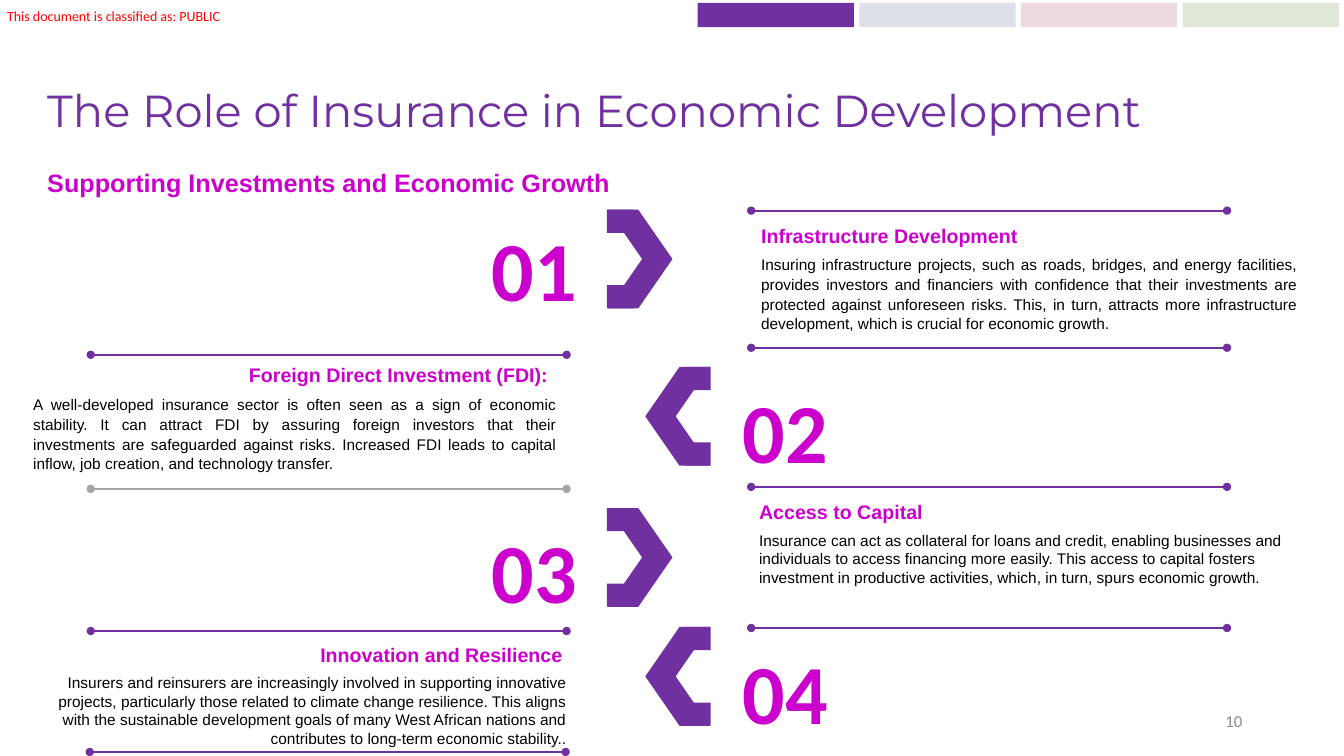
from lxml import etree
from pptx import Presentation
from pptx.dml.color import RGBColor
from pptx.enum.shapes import MSO_CONNECTOR, MSO_SHAPE
from pptx.enum.text import MSO_ANCHOR, PP_ALIGN
from pptx.oxml.ns import qn
from pptx.util import Inches, Pt

LEFT, CENTER, RIGHT, JUSTIFY = PP_ALIGN.LEFT, PP_ALIGN.CENTER, PP_ALIGN.RIGHT, PP_ALIGN.JUSTIFY
TOP, MIDDLE = MSO_ANCHOR.TOP, MSO_ANCHOR.MIDDLE
RECTANGLE, CHEVRON = MSO_SHAPE.RECTANGLE, MSO_SHAPE.CHEVRON
STRAIGHT = MSO_CONNECTOR.STRAIGHT

COLORS = {
    "purple": "7030A0", "magenta": "CC00CC", "black": "000000", "red": "FF0000",
    "gray": "A5A5A5", "page number": "8C8C8C",
    "navy": "203864", "crimson": "990033", "green": "336600",
}

CLASSIFICATION = "This document is classified as: PUBLIC"
TITLE = "The Role of Insurance in Economic Development"
SUBTITLE = "Supporting Investments and Economic Growth"
PAGE_NUMBER = "10"

# Each text box is (left, top, width, height).
TOPICS = [
    {"heading": "Infrastructure Development", "heading_box": (7.45, 2.17, 5.48, 0.34),
     "body": "Insuring infrastructure projects, such as roads, bridges, and energy facilities, "
             "provides investors and financiers with confidence that their investments are "
             "protected against unforeseen risks. This, in turn, attracts more infrastructure "
             "development, which is crucial for economic growth.",
     "body_box": (7.45, 2.47, 5.52, 0.88), "heading_align": LEFT, "body_align": JUSTIFY},
    {"heading": "Foreign Direct Investment (FDI): ", "heading_box": (1.05, 3.55, 4.54, 0.34),
     "body": "A well-developed insurance sector is often seen as a sign of economic stability. "
             "It can attract FDI by assuring foreign investors that their investments are "
             "safeguarded against risks. Increased FDI leads to capital inflow, job creation, "
             "and technology transfer.",
     "body_box": (0.23, 3.86, 5.39, 0.88), "heading_align": RIGHT, "body_align": JUSTIFY},
    {"heading": "Access to Capital", "heading_box": (7.43, 4.91, 4.59, 0.34),
     "body": "Insurance can act as collateral for loans and credit, enabling businesses and "
             "individuals to access financing more easily. This access to capital fosters "
             "investment in productive activities, which, in turn, spurs economic growth.",
     "body_box": (7.43, 5.22, 5.5, 0.66), "heading_align": LEFT, "body_align": LEFT},
    {"heading": "Innovation and Resilience", "heading_box": (1.06, 6.33, 4.62, 0.34),
     "body": "Insurers and reinsurers are increasingly involved in supporting innovative "
             "projects, particularly those related to climate change resilience. This aligns "
             "with the sustainable development goals of many West African nations and "
             "contributes to long-term economic stability..",
     "body_box": (0.23, 6.63, 5.49, 0.84), "heading_align": RIGHT, "body_align": RIGHT},
]

# Number, top of its arrow, top of its text; odd numbers point right.
MARKERS = [(1, 2.08, 2.11), (2, 3.64, 3.72), (3, 5.04, 5.10), (4, 6.22, 6.30)]
ARROW_WIDTH, ARROW_HEIGHT = 0.64, 0.98
ARM_WIDTH, ARM_HEIGHT = 0.26, 0.23

RULE_LENGTH = 4.72
RULES = [(7.45, y, "purple") for y in (2.09, 3.45, 4.83, 6.23)] + [
    (0.9, 3.52, "purple"), (0.9, 4.85, "gray"), (0.9, 6.26, "purple"), (0.89, 7.46, "purple")]

TABS = [("purple", 100), ("navy", 15), ("crimson", 15), ("green", 15)]
TAB_LEFT, TAB_STEP = 6.92, 1.603


def rgb(name):
    return RGBColor.from_string(COLORS[name])


def add_text(page, text, place, size, color, font="Arial", bold=False, align=LEFT,
             anchor=TOP, spacing=None, after=0, inset=None):
    box = page.shapes.add_textbox(*map(Inches, place))
    frame = box.text_frame
    frame.word_wrap = True
    frame.vertical_anchor = anchor
    if inset is not None:
        frame.margin_left = frame.margin_right = Inches(inset)
        frame.margin_top = frame.margin_bottom = Inches(inset)
    para = frame.paragraphs[0]
    para.alignment = align
    para.space_after = Pt(after)
    if spacing:
        para.line_spacing = spacing
    span = para.add_run()
    span.text = text
    span.font.size = Pt(size)
    span.font.name = font
    span.font.bold = bold
    span.font.color.rgb = rgb(color)


def add_block(page, kind, place, color, rotation=0, opacity=100):
    shape = page.shapes.add_shape(kind, *map(Inches, place))
    shape.shadow.inherit = False
    shape.fill.solid()
    shape.fill.fore_color.rgb = rgb(color)
    shape.line.fill.background()
    shape.rotation = rotation
    if opacity < 100:
        tint = shape.fill._xPr.find(qn("a:solidFill"))[0]
        etree.SubElement(tint, qn("a:alpha")).set("val", str(opacity * 1000))
    return shape


def add_marker(page, number, arrow_top, text_top):
    """Draw a bracket-shaped arrow with its number on the blunt side."""
    points_right = number % 2 == 1
    arrow_left, arm_left, text_left = (6.03, 6.02, 4.73) if points_right else (6.4, 6.79, 7.22)
    chevron = add_block(page, CHEVRON, (arrow_left, arrow_top, ARROW_WIDTH, ARROW_HEIGHT),
                        "purple", 0 if points_right else 180)
    chevron.adjustments[0] = 0.53
    for arm_top in (arrow_top, arrow_top + ARROW_HEIGHT - ARM_HEIGHT):
        add_block(page, RECTANGLE, (arm_left, arm_top, ARM_WIDTH, ARM_HEIGHT), "purple")
    add_text(page, f"{number:02d}", (text_left, text_top, 1.14, 1.11), 60, "magenta",
             "Calibri", True, CENTER)


def add_rule(page, left, y, color):
    """Draw a horizontal line with a dot at each end."""
    rule = page.shapes.add_connector(STRAIGHT, Inches(left), Inches(y),
                                     Inches(left + RULE_LENGTH), Inches(y))
    rule.line.color.rgb = rgb(color)
    rule.line.width = Pt(1.5)
    outline = rule.line._get_or_add_ln()
    for end in ("a:headEnd", "a:tailEnd"):
        etree.SubElement(outline, qn(end)).set("type", "oval")
    etree.SubElement(rule._element.spPr, qn("a:effectLst"))


def add_topic(page, topic):
    justified = topic["body_align"] == JUSTIFY
    add_text(page, topic["body"], topic["body_box"], 11, "black", align=topic["body_align"],
             spacing=1.07 if justified else None, after=8 if justified else 0)
    add_text(page, topic["heading"], topic["heading_box"], 14, "magenta", bold=True,
             align=topic["heading_align"])


def main():
    deck = Presentation()
    deck.slide_width, deck.slide_height = Inches(13.33), Inches(7.5)
    page = deck.slides.add_slide(deck.slide_layouts[6])

    add_text(page, CLASSIFICATION, (0.07, 0.07, 2.3, 0.17), 10, "red", "Calibri", inset=0)
    add_text(page, TITLE, (0.37, 0.4, 12.6, 1.45), 32, "purple", "Montserrat",
             anchor=MIDDLE, spacing=0.9)
    add_text(page, SUBTITLE, (0.37, 1.59, 6.68, 0.41), 18, "magenta", bold=True,
             align=JUSTIFY, spacing=1.07, after=8)
    for marker in MARKERS:
        add_marker(page, *marker)
    for topic in TOPICS:
        add_topic(page, topic)
    for rule in RULES:
        add_rule(page, *rule)
    add_text(page, PAGE_NUMBER, (9.42, 6.95, 3, 0.4), 12, "page number", "Calibri",
             align=RIGHT, anchor=MIDDLE)
    for index, (color, opacity) in enumerate(TABS):
        add_block(page, RECTANGLE, (TAB_LEFT + index * TAB_STEP, 0.03, 1.55, 0.24), color,
                  opacity=opacity)
    deck.save("out.pptx")


if __name__ == "__main__":
    main()
